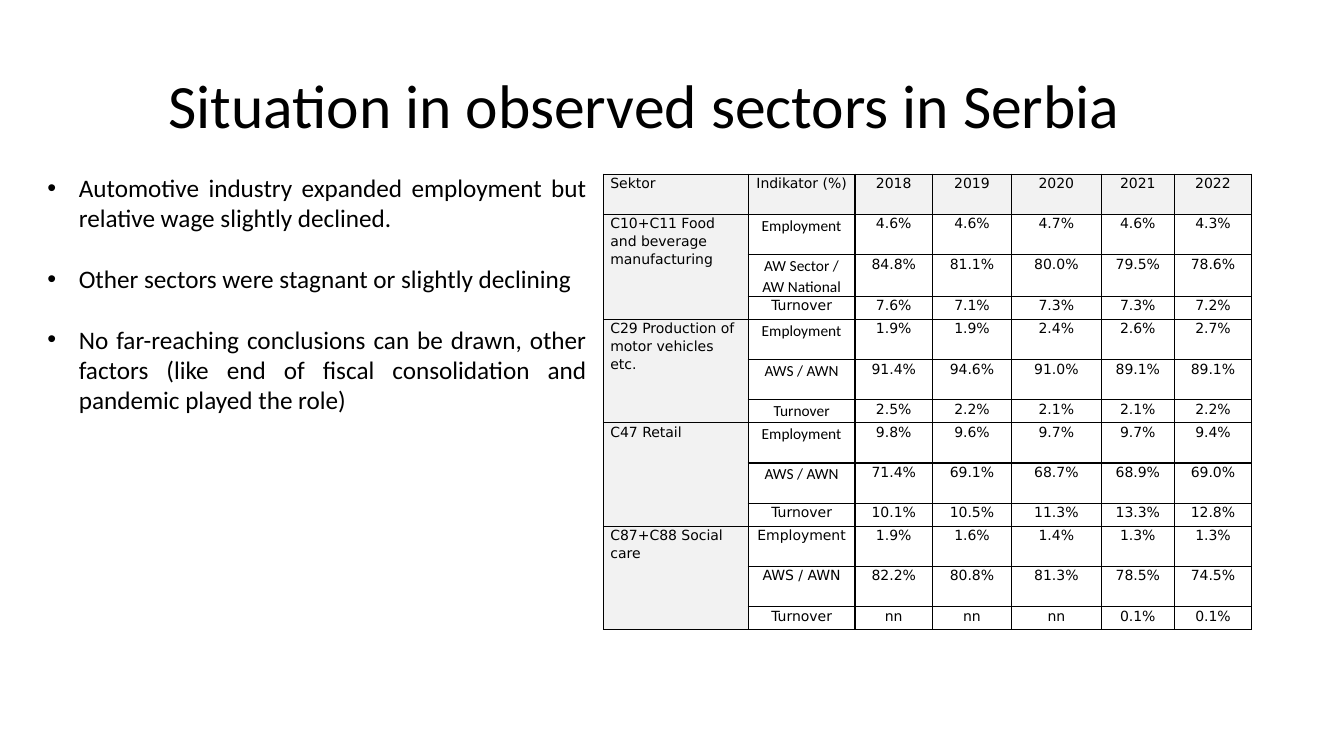
import dataclasses

import pptx
import pptx.dml.color
import pptx.enum.text
import pptx.oxml
import pptx.oxml.ns
import pptx.util

Pt = pptx.util.Pt
ALIGN = pptx.enum.text.PP_ALIGN


@dataclasses.dataclass(frozen=True)
class Theme:
    ink: str = "000000"
    shade: str = "F2F2F2"
    text_font: str = "Calibri"
    table_font: str = "DejaVu Sans"
    title_size: float = 44
    list_size: float = 18
    table_size: float = 10
    indicator_size: float = 11


theme = Theme()


def format_runs(paragraph, font_name, size):
    for run in paragraph.runs:
        run.font.name = font_name
        run.font.size = Pt(size)
        run.font.color.rgb = pptx.dml.color.RGBColor.from_string(theme.ink)


def add_borders(cell):
    properties = cell._tc.get_or_add_tcPr()
    for side in ("lnL", "lnR", "lnT", "lnB"):
        properties.append(pptx.oxml.parse_xml(
            f'<a:{side} {pptx.oxml.ns.nsdecls("a")} w="{Pt(1)}"><a:solidFill>'
            f'<a:srgbClr val="{theme.ink}"/></a:solidFill></a:{side}>'))


findings = [
    "Automotive industry expanded employment but relative wage slightly declined.",
    "Other sectors were stagnant or slightly declining",
    "No far-reaching conclusions can be drawn, other factors "
    "(like end of fiscal consolidation and pandemic played the role)",
]
header = ["Sektor", "Indikator (%)", "2018", "2019", "2020", "2021", "2022"]
sectors = {
    "C10+C11 Food and beverage manufacturing": [
        ["Employment", "4.6%", "4.6%", "4.7%", "4.6%", "4.3%"],
        ["AW Sector / AW National", "84.8%", "81.1%", "80.0%", "79.5%", "78.6%"],
        ["Turnover", "7.6%", "7.1%", "7.3%", "7.3%", "7.2%"],
    ],
    "C29 Production of motor vehicles etc.": [
        ["Employment", "1.9%", "1.9%", "2.4%", "2.6%", "2.7%"],
        ["AWS / AWN", "91.4%", "94.6%", "91.0%", "89.1%", "89.1%"],
        ["Turnover", "2.5%", "2.2%", "2.1%", "2.1%", "2.2%"],
    ],
    "C47 Retail": [
        ["Employment", "9.8%", "9.6%", "9.7%", "9.7%", "9.4%"],
        ["AWS / AWN", "71.4%", "69.1%", "68.7%", "68.9%", "69.0%"],
        ["Turnover", "10.1%", "10.5%", "11.3%", "13.3%", "12.8%"],
    ],
    "C87+C88 Social care": [
        ["Employment", "1.9%", "1.6%", "1.4%", "1.3%", "1.3%"],
        ["AWS / AWN", "82.2%", "80.8%", "81.3%", "78.5%", "74.5%"],
        ["Turnover", "nn", "nn", "nn", "0.1%", "0.1%"],
    ],
}
column_widths = [103.4, 76.4, 55.2, 56.6, 64, 52.4, 55]
tall_row, short_row = 28.7, 16.5
text_font_indicator_rows = {1, 2, 4, 5, 6, 7, 8}

presentation = pptx.Presentation()
presentation.slide_width, presentation.slide_height = Pt(960), Pt(540)
slide = presentation.slides.add_slide(presentation.slide_layouts[1])

# Title
title = slide.shapes.title
title.left, title.top, title.width, title.height = Pt(26.6), Pt(25.2), Pt(867.6), Pt(104.4)
title.text_frame.text = "Situation in observed sectors in Serbia"
title.text_frame.auto_size = pptx.enum.text.MSO_AUTO_SIZE.NONE
title.text_frame.vertical_anchor = pptx.enum.text.MSO_ANCHOR.MIDDLE
heading = title.text_frame.paragraphs[0]
heading.alignment = ALIGN.CENTER
heading.line_spacing = 0.9
format_runs(heading, theme.text_font, theme.title_size)

# Findings
body = slide.placeholders[1]
body.left, body.top, body.width, body.height = Pt(26.6), Pt(119.5), Pt(399.6), Pt(181.4)
body.text_frame.text = "\n".join(findings)
body.text_frame.auto_size = pptx.enum.text.MSO_AUTO_SIZE.NONE
for finding in body.text_frame.paragraphs:
    finding.alignment = ALIGN.JUSTIFY
    finding.space_before = Pt(0)
    finding.space_after = Pt(21.8)
    indent = finding._p.get_or_add_pPr()
    indent.set("marL", str(Pt(22.5)))
    indent.set("indent", str(-Pt(22.5)))
    indent.append(pptx.oxml.parse_xml(
        f'<a:buFont {pptx.oxml.ns.nsdecls("a")} typeface="Arial"/>'))
    indent.append(pptx.oxml.parse_xml(
        f'<a:buChar {pptx.oxml.ns.nsdecls("a")} char="•"/>'))
    format_runs(finding, theme.text_font, theme.list_size)

# Sector table
records = [header]
for sector, indicators in sectors.items():
    for position, indicator in enumerate(indicators):
        records.append([sector if position == 0 else "", *indicator])
row_heights = [tall_row] + [tall_row, tall_row, short_row] * len(sectors)

table = slide.shapes.add_table(
    len(records), len(header), Pt(431), Pt(124.4),
    Pt(sum(column_widths)), Pt(sum(row_heights))).table
table.first_row = False
table.horz_banding = False
for column, width in zip(table.columns, column_widths):
    column.width = Pt(width)
for row, height in zip(table.rows, row_heights):
    row.height = Pt(height)

for row_index, record in enumerate(records):
    for column_index, entry in enumerate(record):
        cell = table.cell(row_index, column_index)
        add_borders(cell)
        if row_index == 0 or column_index == 0:
            cell.fill.solid()
            cell.fill.fore_color.rgb = pptx.dml.color.RGBColor.from_string(theme.shade)
        else:
            cell.fill.background()
        cell.margin_left = cell.margin_right = Pt(5)
        cell.margin_top = cell.margin_bottom = Pt(0)
        cell.text_frame.text = entry
        line = cell.text_frame.paragraphs[0]
        line.alignment = ALIGN.LEFT if column_index == 0 else ALIGN.CENTER
        line.line_spacing = 1.1
        line.space_after = Pt(6)
        if column_index == 1 and row_index in text_font_indicator_rows:
            format_runs(line, theme.text_font, theme.indicator_size)
        else:
            format_runs(line, theme.table_font, theme.table_size)

for first_row in range(1, len(records), 3):
    table.cell(first_row, 0).merge(table.cell(first_row + 2, 0))

presentation.save("out.pptx")
